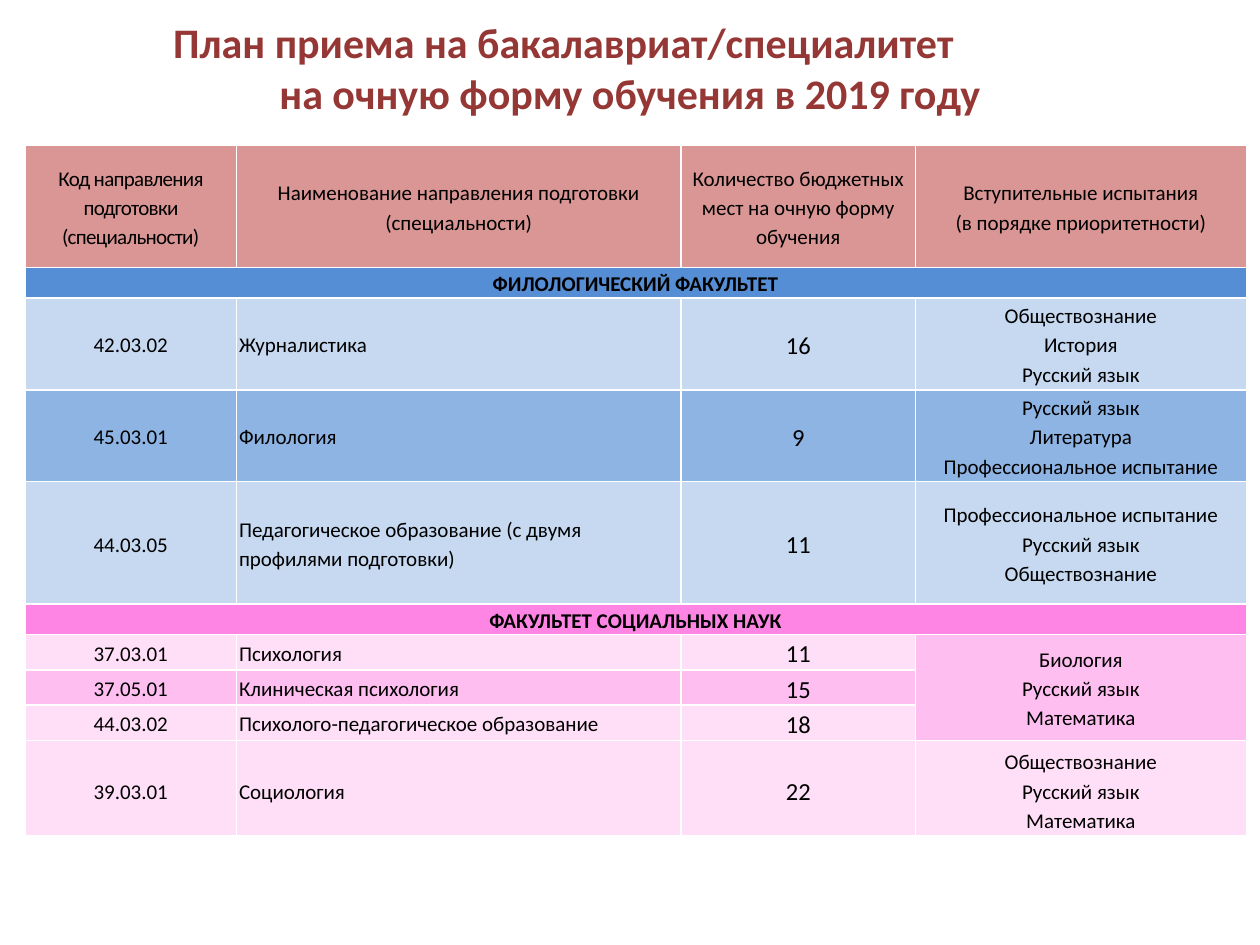
from lxml import etree
from pptx import Presentation
from pptx.dml.color import RGBColor
from pptx.enum.text import MSO_ANCHOR, PP_ALIGN
from pptx.oxml.ns import qn
from pptx.util import Pt

LEFT, CENTER = PP_ALIGN.LEFT, PP_ALIGN.CENTER
MIDDLE = MSO_ANCHOR.MIDDLE
FONT = "Calibri"
BLACK = RGBColor(0x00, 0x00, 0x00)
MAROON = RGBColor(0x95, 0x37, 0x35)
ROSE = RGBColor(0xD9, 0x96, 0x94)
BLUE = RGBColor(0x55, 0x8E, 0xD5)
SKY = RGBColor(0x8E, 0xB4, 0xE3)
PALE = RGBColor(0xC6, 0xD9, 0xF1)
HOT = RGBColor(0xFF, 0x85, 0xE5)
PINK = RGBColor(0xFE, 0xBE, 0xF0)
BLUSH = RGBColor(0xFF, 0xDF, 0xF7)

TITLE = ["План приема на бакалавриат/специалитет", "на очную форму обучения в 2019 году"]
SHIFT = 76  # the first title line is centred in a space this much narrower
WIDTHS = [121, 254, 134, 189]

# height, fill, cell texts; a single text is a faculty heading
ROWS = [
    (70, ROSE, ["Код направления подготовки (специальности)",
                "Наименование направления подготовки (специальности)",
                "Количество бюджетных мест на очную форму обучения",
                "Вступительные испытания\n(в порядке приоритетности)"]),
    (17.3, BLUE, ["ФИЛОЛОГИЧЕСКИЙ ФАКУЛЬТЕТ"]),
    (52.5, PALE, ["42.03.02", "Журналистика", "16",
                  "Обществознание\nИстория\nРусский язык"]),
    (52.5, SKY, ["45.03.01", "Филология", "9",
                 "Русский язык\nЛитература\nПрофессиональное испытание"]),
    (70, PALE, ["44.03.05", "Педагогическое образование (с двумя профилями подготовки)", "11",
                "Профессиональное испытание\nРусский язык\nОбществознание"]),
    (17.3, HOT, ["ФАКУЛЬТЕТ СОЦИАЛЬНЫХ НАУК"]),
    (20.2, BLUSH, ["37.03.01", "Психология", "11", "Биология\nРусский язык\nМатематика"]),
    (20.2, PINK, ["37.05.01", "Клиническая психология", "15", ""]),
    (20.2, BLUSH, ["44.03.02", "Психолого-педагогическое образование", "18", ""]),
    (54.6, BLUSH, ["39.03.01", "Социология", "22",
                   "Обществознание\nРусский язык\nМатематика"]),
]
SHARED = 6  # first of the three rows with the same exams
LAST = len(ROWS) - 1


def style(item, values):
    for name, value in values.items():
        setattr(item, name, value)


def border(cell):
    """Draw thin white lines on all four sides; call before setting the fill."""
    props = cell._tc.get_or_add_tcPr()
    for side in ("lnL", "lnR", "lnT", "lnB"):
        line = etree.SubElement(props, qn("a:" + side), w=str(Pt(1)))
        fill = etree.SubElement(line, qn("a:solidFill"))
        etree.SubElement(fill, qn("a:srgbClr"), val="FFFFFF")


deck = Presentation()
style(deck, {"slide_width": Pt(720), "slide_height": Pt(540)})
slide = deck.slides.add_slide(deck.slide_layouts[5])

title = slide.shapes.title
style(title, {"left": Pt(0), "top": Pt(0), "width": Pt(720), "height": Pt(77)})
frame = title.text_frame
style(frame, {"vertical_anchor": MIDDLE, "word_wrap": True, "margin_right": Pt(7.2 + SHIFT)})
frame.text = "\n".join(TITLE)
for para in frame.paragraphs:
    para.alignment = CENTER
    style(para.runs[0].font, {"name": FONT, "size": Pt(24), "bold": True})
    para.runs[0].font.color.rgb = MAROON
frame.paragraphs[1]._p.get_or_add_pPr().set("marL", str(Pt(SHIFT)))

high = sum(row[0] for row in ROWS)
table = slide.shapes.add_table(len(ROWS), len(WIDTHS), Pt(14.2), Pt(83),
                               Pt(sum(WIDTHS)), Pt(high)).table
style(table, {"first_row": False, "horz_banding": False})
for col, width in zip(table.columns, WIDTHS):
    col.width = Pt(width)

for r, (height, color, texts) in enumerate(ROWS):
    table.rows[r].height = Pt(height)
    heading = len(texts) == 1
    for c in range(len(WIDTHS)):
        cell = table.cell(r, c)
        border(cell)
        cell.fill.solid()
        shared = c == 3 and SHARED <= r < SHARED + 3
        cell.fill.fore_color.rgb = PINK if shared else color
        style(cell, {"vertical_anchor": MIDDLE, "margin_left": Pt(1.4), "margin_right": Pt(1.4),
                     "margin_top": Pt(2 if r == LAST else 0), "margin_bottom": Pt(0)})
        if c >= len(texts) or not texts[c]:
            continue
        cell.text_frame.text = texts[c]
        for para in cell.text_frame.paragraphs:
            style(para, {"alignment": LEFT if c == 1 and r else CENTER, "line_spacing": 1.15})
            font = para.runs[0].font
            style(font, {"name": FONT, "size": Pt(14 if c == 2 and r else 12), "bold": heading})
            font.color.rgb = BLACK
            if r == c == 0:
                para.runs[0]._r.get_or_add_rPr().set("spc", "-40")
    if heading:
        table.cell(r, 0).merge(table.cell(r, 3))

table.cell(SHARED, 3).merge(table.cell(SHARED + 2, 3))
deck.save("out.pptx")
